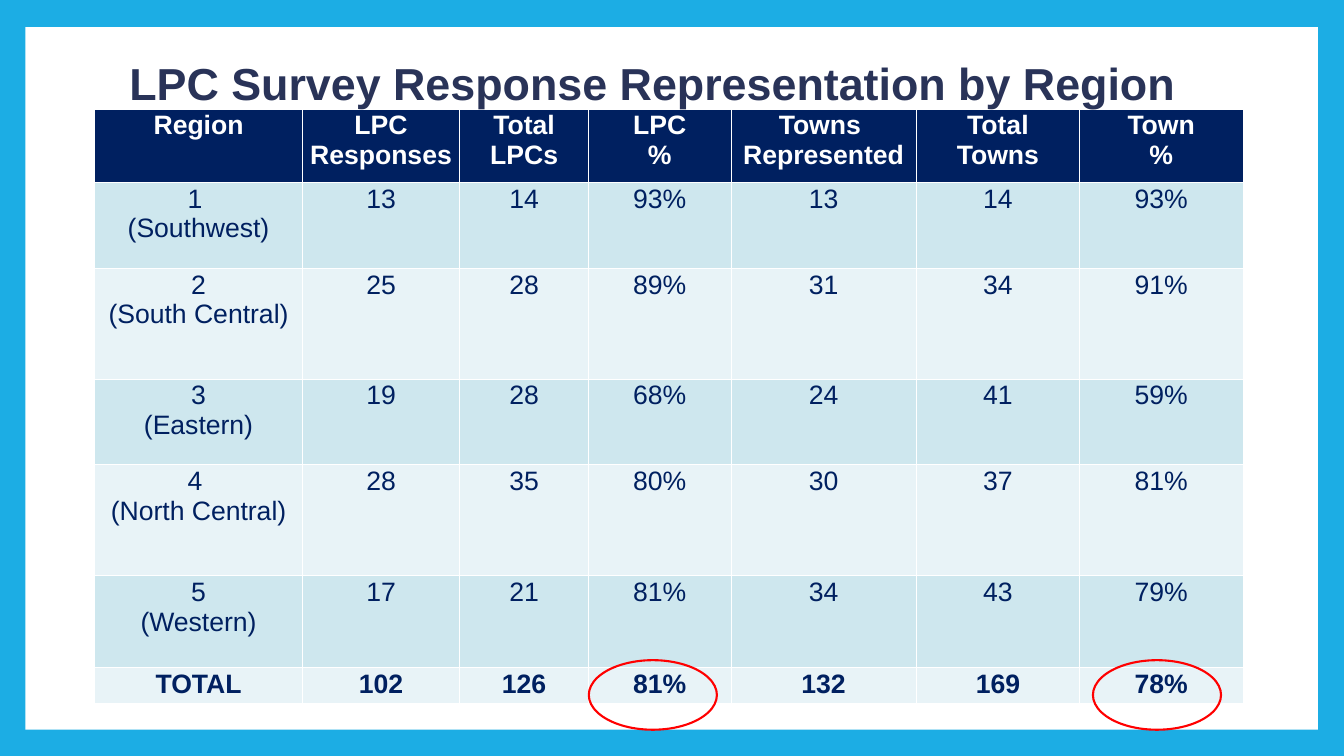
from lxml.etree import SubElement
from pptx import Presentation
from pptx.dml.color import RGBColor
from pptx.enum.shapes import MSO_SHAPE
from pptx.enum.text import MSO_AUTO_SIZE, PP_ALIGN
from pptx.oxml.ns import qn
from pptx.util import Inches, Pt

COLORS = {
    "frame": "1CADE4", "panel": "FFFFFF", "title": "293358", "navy": "002060",
    "odd": "CEE7EE", "even": "E8F3F7", "ring": "FF0000",
}
COLUMN_WIDTHS = [15.45, 11.7, 9.6, 10.58, 13.8, 12.15, 12.15]
ROW_HEIGHTS = [9.73, 11.33, 14.67, 11.33, 14.67, 12.13, 4.8]
SURVEY = [
    ["Region", "LPC\nResponses", "Total\nLPCs", "LPC\n%", "Towns \nRepresented", "Total\nTowns", "Town\n%"],
    ["1 \n(Southwest)", "13", "14", "93%", "13", "14", "93%"],
    ["2\n(South Central)", "25", "28", "89%", "31", "34", "91%"],
    ["3\n(Eastern)", "19", "28", "68%", "24", "41", "59%"],
    ["4 \n(North Central)", "28", "35", "80%", "30", "37", "81%"],
    ["5\n(Western)", "17", "21", "81%", "34", "43", "79%"],
    ["TOTAL", "102", "126", "81%", "132", "169", "78%"],
]


class SurveyPage:
    """Draws styled elements on one slide, with lengths in percent of its size."""

    def __init__(self, deck, font="Arial"):
        self.deck = deck
        self.font = font
        self.page = deck.slides.add_slide(deck.slide_layouts[6])
        self.page.background.fill.solid()
        self.page.background.fill.fore_color.rgb = self.color("frame")

    def color(self, name):
        return RGBColor.from_string(COLORS[name])

    def across(self, share):
        return round(self.deck.slide_width * share / 100)

    def down(self, share):
        return round(self.deck.slide_height * share / 100)

    def place(self, left, top, width, height):
        return self.across(left), self.down(top), self.across(width), self.down(height)

    def inset(self, holder, side, end):
        holder.margin_left = holder.margin_right = self.across(side)
        holder.margin_top = holder.margin_bottom = self.down(end)

    def label(self, frame, text, size, color, bold):
        frame.text = text
        for para in frame.paragraphs:
            para.alignment = PP_ALIGN.CENTER
            for span in para.runs:
                span.font.name = self.font
                span.font.size = Pt(size)
                span.font.bold = bold
                span.font.color.rgb = self.color(color)

    def shape(self, kind, area, fill=None, line=None):
        shape = self.page.shapes.add_shape(kind, *self.place(*area))
        shape.shadow.inherit = False
        if fill:
            shape.fill.solid()
            shape.fill.fore_color.rgb = self.color(fill)
        else:
            shape.fill.background()
        if line:
            shape.line.color.rgb = self.color(line)
            shape.line.width = Pt(1.5)
        else:
            shape.line.fill.background()

    def title(self, text, area):
        box = self.page.shapes.add_textbox(*self.place(*area))
        frame = box.text_frame
        frame.word_wrap = True
        frame.auto_size = MSO_AUTO_SIZE.SHAPE_TO_FIT_TEXT
        self.inset(frame, 0.53, 0.4)
        self.label(frame, text, 32, "title", True)
        frame.paragraphs[0].line_spacing = Pt(85.9)

    def borders(self, cell):
        properties = cell._tc.get_or_add_tcPr()
        for side in ("a:lnL", "a:lnR", "a:lnT", "a:lnB"):
            line = SubElement(properties, qn(side), w=str(Pt(0.5)))
            fill = SubElement(line, qn("a:solidFill"))
            SubElement(fill, qn("a:srgbClr"), val=COLORS["panel"])

    def table(self, rows, left, top, widths, heights):
        area = self.place(left, top, sum(widths), sum(heights))
        table = self.page.shapes.add_table(len(rows), len(widths), *area).table
        for column, width in zip(table.columns, widths):
            column.width = self.across(width)
        for row, height in zip(table.rows, heights):
            row.height = self.down(height)
        for number, texts in enumerate(rows):
            header = number == 0
            fill = "navy" if header else "odd" if number % 2 else "even"
            bold = header or number == len(rows) - 1
            for cell, text in zip(table.rows[number].cells, texts):
                self.inset(cell, 0.38, 0.27)
                self.borders(cell)
                cell.fill.solid()
                cell.fill.fore_color.rgb = self.color(fill)
                self.label(cell.text_frame, text, 19, "panel" if header else "navy", bold)


def main():
    deck = Presentation()
    deck.slide_width = Inches(13.33)
    deck.slide_height = Inches(7.5)
    page = SurveyPage(deck)
    page.shape(MSO_SHAPE.RECTANGLE, (1.88, 3.6, 96.17, 92.93), fill="panel")
    page.table(SURVEY, 7.05, 14.4, COLUMN_WIDTHS, ROW_HEIGHTS)
    page.title("LPC Survey Response Representation by Region", (6.3, -1.87, 84.55, 14.27))
    for left in (43.81, 81.32):
        page.shape(MSO_SHAPE.OVAL, (left, 87.33, 9.53, 9.2), line="ring")
    deck.save("out.pptx")


if __name__ == "__main__":
    main()
